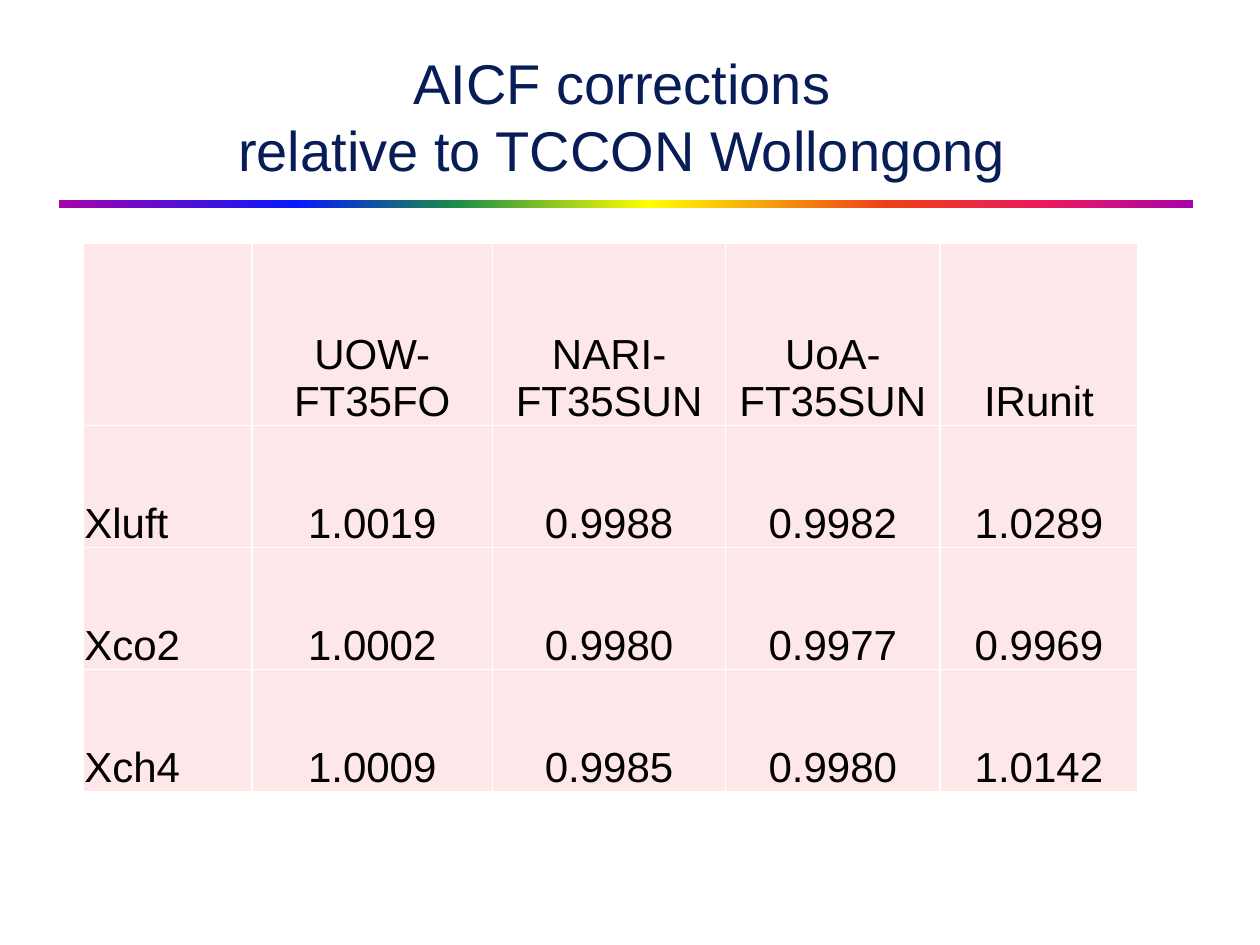
"""Build a slide with a table of AICF corrections under a rainbow rule."""
import lxml.etree
import pptx
import pptx.dml.color
import pptx.enum.shapes
import pptx.enum.text
import pptx.oxml.ns
import pptx.util

Cm = pptx.util.Cm
Pt = pptx.util.Pt
RGBColor = pptx.dml.color.RGBColor
Align = pptx.enum.text.PP_ALIGN
Anchor = pptx.enum.text.MSO_ANCHOR
qn = pptx.oxml.ns.qn

TITLE = "AICF corrections\vrelative to TCCON Wollongong"
ROWS = [
    ("", "UOW-FT35FO", "NARI-FT35SUN", "UoA- FT35SUN", "IRunit"),
    ("Xluft", "1.0019", "0.9988", "0.9982", "1.0289"),
    ("Xco2", "1.0002", "0.9980", "0.9977", "0.9969"),
    ("Xch4", "1.0009", "0.9985", "0.9980", "1.0142"),
]
COLUMN_WIDTHS = (3.4, 4.85, 4.7, 4.32, 3.99)
ROW_HEIGHTS = (3.68, 2.46, 2.46, 2.46)

FONT = "Arial"
NAVY = RGBColor(0x08, 0x1D, 0x58)
BLACK = RGBColor(0, 0, 0)
WHITE = RGBColor(255, 255, 255)
PINK = RGBColor(0xFE, 0xE7, 0xE8)
RAINBOW = [
    (0, RGBColor(0xA6, 0x03, 0xAB)),
    (21, RGBColor(0x08, 0x19, 0xFB)),
    (35, RGBColor(0x1A, 0x8D, 0x48)),
    (52, RGBColor(0xFF, 0xFF, 0x00)),
    (73, RGBColor(0xEE, 0x3F, 0x17)),
    (88, RGBColor(0xE8, 0x17, 0x66)),
    (100, RGBColor(0xA6, 0x03, 0xAB)),
]


def format_paragraph(paragraph, size, color, alignment):
    paragraph.alignment = alignment
    paragraph.font.name = FONT
    paragraph.font.size = Pt(size)
    paragraph.font.color.rgb = color


def add_rainbow_rule(slide):
    rule = slide.shapes.add_shape(
        pptx.enum.shapes.MSO_SHAPE.RECTANGLE, Cm(1.19), Cm(4.04), Cm(22.86), Cm(0.15))
    rule.shadow.inherit = False
    rule.line.fill.background()
    rule.fill.gradient()
    rule.fill.gradient_angle = 0
    stops = rule.fill._fill._gradFill.find(qn("a:gsLst"))
    for stop in list(stops):
        stops.remove(stop)
    for percent, color in RAINBOW:
        stop = lxml.etree.SubElement(stops, qn("a:gs"), pos=str(percent * 1000))
        lxml.etree.SubElement(stop, qn("a:srgbClr"), val=str(color))


def add_borders(cell, color):
    properties = cell._tc.get_or_add_tcPr()
    for side in ("a:lnL", "a:lnR", "a:lnT", "a:lnB"):
        line = lxml.etree.SubElement(properties, qn(side), w=str(Pt(1)))
        fill = lxml.etree.SubElement(line, qn("a:solidFill"))
        lxml.etree.SubElement(fill, qn("a:srgbClr"), val=str(color))


def add_corrections_table(slide):
    table = slide.shapes.add_table(
        len(ROWS), len(COLUMN_WIDTHS), Cm(1.68), Cm(4.9),
        Cm(sum(COLUMN_WIDTHS)), Cm(sum(ROW_HEIGHTS))).table
    table.first_row = table.horz_banding = False
    for column, width in zip(table.columns, COLUMN_WIDTHS):
        column.width = Cm(width)
    for row, height, texts in zip(table.rows, ROW_HEIGHTS, ROWS):
        row.height = Cm(height)
        for index, (cell, text) in enumerate(zip(row.cells, texts)):
            cell.text = text
            cell.vertical_anchor = Anchor.BOTTOM
            cell.margin_left = cell.margin_right = cell.margin_top = Cm(0.02)
            cell.margin_bottom = 0
            add_borders(cell, WHITE)
            cell.fill.solid()
            cell.fill.fore_color.rgb = PINK
            alignment = Align.CENTER if index else Align.LEFT
            format_paragraph(cell.text_frame.paragraphs[0], 24, BLACK, alignment)


def main():
    presentation = pptx.Presentation()
    presentation.slide_width, presentation.slide_height = Cm(25.4), Cm(19.05)
    slide = presentation.slides.add_slide(presentation.slide_layouts[5])
    add_rainbow_rule(slide)
    add_corrections_table(slide)
    title = slide.shapes.title
    title.left, title.top, title.width, title.height = Cm(1.07), Cm(0.74), Cm(22.94), Cm(3.07)
    title.text_frame.text = TITLE
    title.text_frame.vertical_anchor = Anchor.BOTTOM
    title.text_frame.auto_size = pptx.enum.text.MSO_AUTO_SIZE.NONE
    format_paragraph(title.text_frame.paragraphs[0], 32, NAVY, Align.CENTER)
    presentation.save("out.pptx")


if __name__ == "__main__":
    main()
